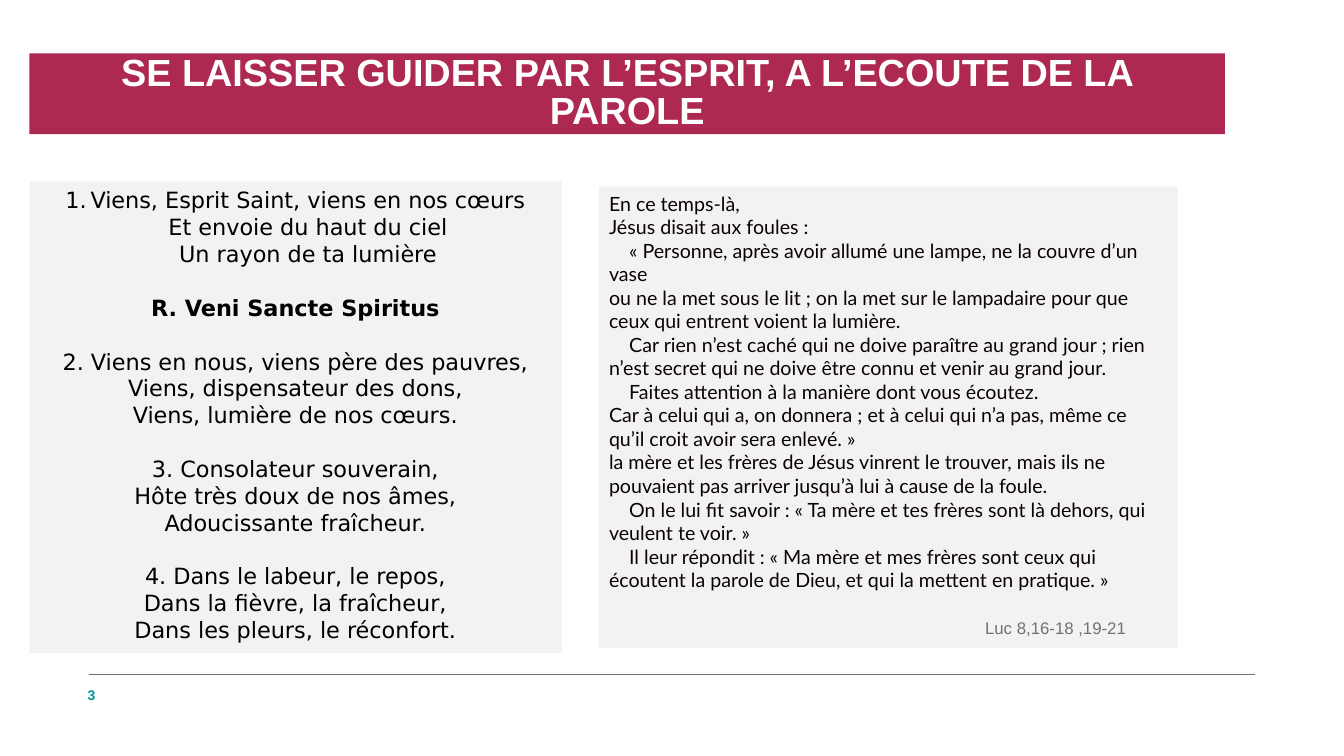
from copy import deepcopy

from lxml import etree
from pptx import Presentation
from pptx import util as u
from pptx.dml.color import RGBColor
from pptx.enum import shapes, text
from pptx.oxml.ns import qn

CRIMSON = RGBColor(0xAD, 0x29, 0x52)
PALE = RGBColor(0xF2, 0xF2, 0xF2)
WHITE = RGBColor(0xFF, 0xFF, 0xFF)
BLACK = RGBColor(0, 0, 0)
INK = RGBColor(0x0B, 0x01, 0x02)
GREY = RGBColor(0x70, 0x71, 0x73)
TEAL = RGBColor(0x00, 0x95, 0x97)

HYMN = [
    ("Viens, Esprit Saint, viens en nos cœurs\nEt envoie du haut du ciel\nUn rayon de ta lumière",
     dict(numbered=True, left=0.25, first=-0.25)),
    ("R. Veni Sancte Spiritus", dict(bold=True, before=19.2)),
    ("2. Viens en nous, viens père des pauvres,\nViens, dispensateur des dons,\nViens, lumière de nos cœurs.",
     dict(before=19.2)),
    ("3. Consolateur souverain,\nHôte très doux de nos âmes,\nAdoucissante fraîcheur.", dict(before=19.2)),
    ("4. Dans le labeur, le repos,\nDans la fièvre, la fraîcheur,\nDans les pleurs, le réconfort.",
     dict(before=19.2)),
]
INDENT = dict(first=0.2)
GOSPEL = [
    ("En ce temps-là,\nJésus disait aux foules :", {}),
    ("« Personne, après avoir allumé une lampe, ne la couvre d’un vase\n"
     "ou ne la met sous le lit ; on la met sur le lampadaire pour que ceux qui entrent voient la lumière.", INDENT),
    ("Car rien n’est caché qui ne doive paraître au grand jour ; rien n’est secret "
     "qui ne doive être connu et venir au grand jour.", INDENT),
    ("Faites attention à la manière dont vous écoutez.\n"
     "Car à celui qui a, on donnera ; et à celui qui n’a pas, même ce qu’il croit avoir sera enlevé. »", INDENT),
    ("la mère et les frères de Jésus vinrent le trouver, mais ils ne pouvaient pas arriver "
     "jusqu’à lui à cause de la foule.", {}),
    ("On le lui fit savoir : « Ta mère et tes frères sont là dehors, qui veulent te voir. »", INDENT),
    ("Il leur répondit : « Ma mère et mes frères sont ceux qui écoutent la parole de Dieu, "
     "et qui la mettent en pratique. »", INDENT),
    ("Luc 8,16-18 ,19-21", dict(font="Arial", size=12, color=GREY, left=3.73, before=19)),
]


def write(para, words, font="Arial", size=16, color=BLACK, bold=False, align=text.PP_ALIGN.LEFT,
          left=0, first=0, before=0, spacing=1.0, numbered=False):
    props = para._p.get_or_add_pPr()
    props.set("marL", str(u.Inches(left)))
    props.set("indent", str(u.Inches(first)))
    if numbered:
        etree.SubElement(props, qn("a:buFont"), typeface="+mj-lt")
        etree.SubElement(props, qn("a:buAutoNum"), type="arabicPeriod")
    else:
        etree.SubElement(props, qn("a:buNone"))
    para.alignment = align
    para.line_spacing = spacing
    para.space_before = u.Pt(before)
    para.space_after = u.Pt(0)
    for index, line in enumerate(words.split("\n")):
        if index:
            para.add_line_break()
            para._p[-1].append(deepcopy(span._r.rPr))
        span = para.add_run()
        span.text = line
        span.font.name, span.font.size, span.font.bold = font, u.Pt(size), bold
        span.font.color.rgb = color


class Page:
    """Hold the style and the current slide."""

    def __init__(self, deck):
        self.slide = deck.slides.add_slide(deck.slide_layouts[3])

    def fill_text(self, box, paragraphs, anchor, **style):
        frame = box.text_frame
        frame.word_wrap = True
        frame.auto_size = text.MSO_AUTO_SIZE.NONE
        frame.vertical_anchor = anchor
        for index, (words, extra) in enumerate(paragraphs):
            para = frame.add_paragraph() if index else frame.paragraphs[0]
            write(para, words, **{**style, **extra})

    def panel(self, slot, place, fill, paragraphs, anchor=text.MSO_ANCHOR.TOP, **style):
        box = self.slide.placeholders[slot]
        box.left, box.top, box.width, box.height = map(u.Inches, place)
        box.fill.solid()
        box.fill.fore_color.rgb = fill
        self.fill_text(box, paragraphs, anchor, **style)

    def label(self, place, words, **style):
        box = self.slide.shapes.add_textbox(*map(u.Inches, place))
        self.fill_text(box, [(words, {})], text.MSO_ANCHOR.MIDDLE, **style)

    def rule(self, ends, color, width):
        line = self.slide.shapes.add_connector(shapes.MSO_CONNECTOR.STRAIGHT, *map(u.Inches, ends))
        line.line.color.rgb = color
        line.line.width = u.Pt(width)
        etree.SubElement(line._element.spPr, qn("a:effectLst"))


def main():
    deck = Presentation()
    deck.slide_width, deck.slide_height = u.Inches(13.33), u.Inches(7.5)
    page = Page(deck)
    page.rule((0.88, 6.69, 12.45, 6.69), GREY, 0.5)
    page.label((0.77, 6.75, 0.59, 0.28), "3", size=10, color=TEAL, bold=True)
    page.panel(0, (0.29, 0.53, 11.86, 0.8), CRIMSON,
               [("SE LAISSER GUIDER PAR L’ESPRIT, A L’ECOUTE DE LA PAROLE", {})],
               anchor=text.MSO_ANCHOR.MIDDLE, size=27, color=WHITE, bold=True,
               align=text.PP_ALIGN.CENTER, spacing=0.85)
    page.panel(1, (0.29, 1.8, 5.28, 4.68), PALE, HYMN,
               font="DejaVu Sans", align=text.PP_ALIGN.CENTER)
    page.panel(2, (5.94, 1.85, 5.74, 4.58), PALE, GOSPEL, font="Lato", size=14, color=INK)
    deck.save("out.pptx")


if __name__ == "__main__":
    main()
